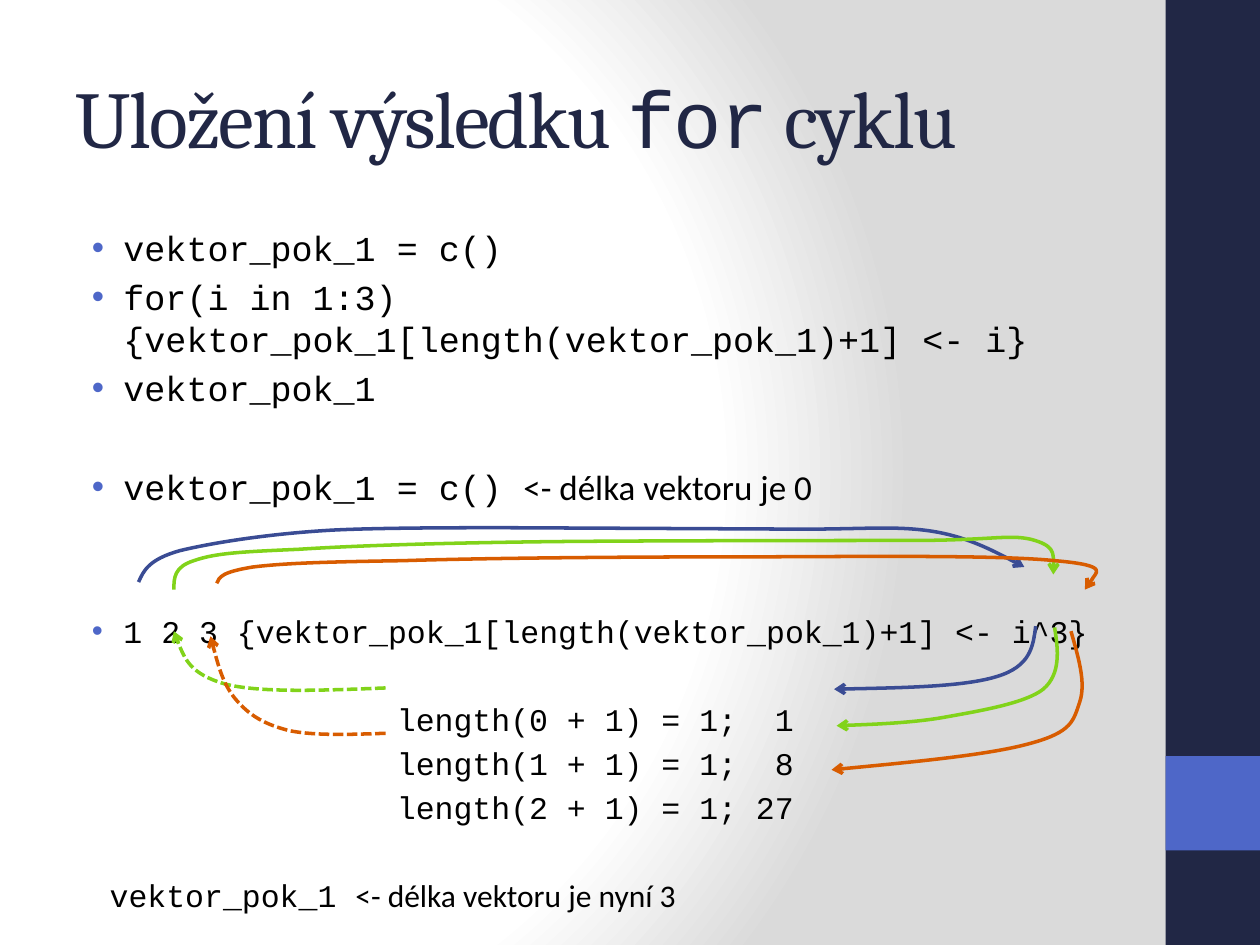
from lxml import etree
from pptx import Presentation
from pptx.dml.color import RGBColor
from pptx.enum.dml import MSO_LINE
from pptx.enum.shapes import MSO_SHAPE
from pptx.enum.text import MSO_ANCHOR, MSO_AUTO_SIZE, PP_ALIGN
from pptx.oxml import parse_xml
from pptx.oxml.ns import nsdecls, qn
from pptx.util import Inches, Pt

RECTANGLE = MSO_SHAPE.RECTANGLE
DASHED = MSO_LINE.SQUARE_DOT
MIDDLE, TOP = MSO_ANCHOR.MIDDLE, MSO_ANCHOR.TOP
LEFT, CENTER = PP_ALIGN.LEFT, PP_ALIGN.CENTER
NO_AUTOFIT = MSO_AUTO_SIZE.NONE

NAVY, BLUE, BLACK = "212745", "4E67C8", "000000"
DARK_BLUE, GREEN, ORANGE = "3A4C94", "81D31A", "D85C00"
HEADING, CODE, PLAIN = "Cambria", "Courier New", "Calibri"
STRIPE = 0.75                  # width of the right-hand stripe
MARGIN, TEXT_WIDTH = 0.5, 8.33
UNITS = 1000                   # freeform units per inch


def color(hex_text):
    return RGBColor.from_string(hex_text)


def add_run(paragraph, text, font_name, size, hex_text):
    run = paragraph.add_run()
    run.text = text
    run.font.name = font_name
    run.font.size = Pt(size)
    run.font.color.rgb = color(hex_text)
    return run


presentation = Presentation()
presentation.slide_width = Inches(10)
presentation.slide_height = Inches(7.5)
slide = presentation.slides.add_slide(presentation.slide_layouts[1])

# Background: circular gradient from white to grey
slide.background.fill.gradient()
gradient = slide.element.find(".//" + qn("a:gradFill"))
stops = "".join(
    f'<a:gs pos="{share * 1000}"><a:srgbClr val="{shade}"/></a:gs>'
    for share, shade in [(0, "FFFFFF"), (75, "FFFFFF"), (100, "DADADA")])
gradient.getparent().replace(gradient, parse_xml(
    f'<a:gradFill rotWithShape="1" {nsdecls("a")}><a:gsLst>{stops}</a:gsLst>'
    '<a:path path="circle">'
    '<a:fillToRect l="20000" t="50000" r="100000" b="50000"/>'
    '</a:path></a:gradFill>'))

# Right-hand stripe with its accent square
for top, height, fill in [(0, 7.5, NAVY), (8 * STRIPE, STRIPE, BLUE)]:
    shape = slide.shapes.add_shape(RECTANGLE, Inches(10 - STRIPE), Inches(top),
                                   Inches(STRIPE), Inches(height))
    shape.shadow.inherit = False
    shape.fill.solid()
    shape.fill.fore_color.rgb = color(fill)
    shape.line.fill.background()

# Title and body placeholders
title, body = slide.shapes.title, slide.placeholders[1]
for shape, top, height, anchor in [(title, 0.3, 1.25, MIDDLE),
                                   (body, 1.75, 5.25, TOP)]:
    shape.left, shape.top = Inches(MARGIN), Inches(top)
    shape.width, shape.height = Inches(TEXT_WIDTH), Inches(height)
    shape.text_frame.word_wrap = True
    shape.text_frame.auto_size = NO_AUTOFIT
    shape.text_frame.vertical_anchor = anchor

paragraph = title.text_frame.paragraphs[0]
paragraph.alignment = LEFT
for text, font_name in [("Uložení výsledku ", HEADING), ("for", CODE),
                        (" cyklu", HEADING)]:
    run = add_run(paragraph, text, font_name, 46, NAVY)
    run.font._element.set("spc", "-100")

# Body lines: code, comment, size, space before, left indent, bullet, alignment
lines = [
    ("vektor_pok_1 = c()", "", 20, 0, 0.38, True, LEFT),
    ("for(i in 1:3) {vektor_pok_1[length(vektor_pok_1)+1] <- i}", "",
     20, 4, 0.38, True, LEFT),
    ("vektor_pok_1", "", 20, 4, 0.38, True, LEFT),
    ("vektor_pok_1 = c() ", "<- délka vektoru je 0", 20, 32.4, 0.38, True, LEFT),
    ("1 2 3 {vektor_pok_1[length(vektor_pok_1)+1] <- i^3}", "",
     18, 59.4, 0.38, True, LEFT),
    ("length(0 + 1) = 1;  1", "", 18, 28.7, 0.12, False, CENTER),
    ("length(1 + 1) = 1;  8", "", 18, 3.7, 0.12, False, CENTER),
    ("length(2 + 1) = 1; 27", "", 18, 3.7, 0.12, False, CENTER),
    ("vektor_pok_1 ", "<- délka vektoru je nyní 3", 18, 28.7, 0.27, False, LEFT),
]
for index, (code, comment, size, before, indent, bullet, align) in enumerate(lines):
    frame = body.text_frame
    paragraph = frame.add_paragraph() if index else frame.paragraphs[0]
    paragraph.alignment = align
    paragraph.space_before = Pt(before)
    paragraph.line_spacing = Pt(1.2 * size)
    properties = paragraph._p.get_or_add_pPr()
    properties.set("marL", str(Inches(indent)))
    properties.set("indent", str(Inches(-0.25 if bullet else 0)))
    if bullet:
        bullet_color = etree.SubElement(properties, qn("a:buClr"))
        etree.SubElement(bullet_color, qn("a:srgbClr"), val=BLUE)
        etree.SubElement(properties, qn("a:buFont"), typeface="Arial")
        etree.SubElement(properties, qn("a:buChar"), char="•")
    else:
        etree.SubElement(properties, qn("a:buNone"))
    add_run(paragraph, code, CODE, size, BLACK)
    if comment:
        add_run(paragraph, comment, PLAIN, size, BLACK)

# Curved arrows: start point, then two control points and an end per Bezier piece
arrows = [
    (DARK_BLUE, False, [
        (1.1, 4.62), (1.14, 4.53), (1.18, 4.44), (1.43, 4.37),
        (1.68, 4.31), (2.11, 4.24), (2.6, 4.21),
        (3.09, 4.18), (4.35, 4.19), (4.35, 4.19),
        (4.35, 4.19), (6.37, 4.2), (6.37, 4.2),
        (6.88, 4.2), (7.12, 4.17), (7.42, 4.22),
        (7.71, 4.27), (8.13, 4.5), (8.13, 4.5)]),
    (DARK_BLUE, False, [
        (8.22, 4.97), (8.2, 5.13), (8.18, 5.29), (7.91, 5.37),
        (7.65, 5.45), (7.13, 5.46), (6.62, 5.47)]),
    (GREEN, True, [
        (3.06, 5.46), (2.56, 5.48), (2.07, 5.5), (1.79, 5.43),
        (1.51, 5.35), (1.44, 5.18), (1.38, 5.01)]),
    (GREEN, False, [
        (8.37, 4.98), (8.4, 5.16), (8.42, 5.35), (8.28, 5.47),
        (8.14, 5.58), (7.79, 5.64), (7.51, 5.69),
        (7.24, 5.74), (6.64, 5.76), (6.64, 5.76)]),
    (ORANGE, True, [
        (3.06, 5.82), (2.78, 5.83), (2.5, 5.84), (2.3, 5.8),
        (2.1, 5.75), (1.98, 5.68), (1.87, 5.55),
        (1.77, 5.43), (1.72, 5.24), (1.67, 5.05)]),
    (ORANGE, False, [
        (8.5, 5.01), (8.56, 5.22), (8.62, 5.42), (8.57, 5.57),
        (8.52, 5.72), (8.51, 5.81), (8.18, 5.9),
        (7.86, 5.99), (7.23, 6.05), (6.6, 6.11)]),
    (GREEN, False, [
        (1.38, 4.68), (1.38, 4.59), (1.38, 4.5), (1.54, 4.45),
        (1.71, 4.39), (1.91, 4.38), (2.37, 4.36),
        (2.83, 4.33), (3.51, 4.31), (4.32, 4.3),
        (5.13, 4.29), (7.22, 4.29), (7.22, 4.29),
        (7.87, 4.29), (8, 4.24), (8.18, 4.28),
        (8.37, 4.33), (8.37, 4.44), (8.36, 4.56)]),
    (ORANGE, False, [
        (1.72, 4.63), (1.74, 4.58), (1.76, 4.54), (2.01, 4.5),
        (2.26, 4.47), (2.58, 4.46), (3.2, 4.45),
        (3.83, 4.43), (4.91, 4.42), (5.77, 4.42),
        (6.63, 4.42), (7.89, 4.4), (8.37, 4.45),
        (8.84, 4.49), (8.61, 4.68), (8.61, 4.68)]),
]
for line_color, dashed, points in arrows:
    points = [(round(x * UNITS), round(y * UNITS)) for x, y in points]
    anchors = points[::3]
    builder = slide.shapes.build_freeform(*anchors[0], scale=Inches(1) / UNITS)
    builder.add_line_segments(anchors[1:], close=False)
    shape = builder.convert_to_shape()

    # Bend each straight segment into its Bezier piece
    left, top = (min(values) for values in zip(*anchors))
    segments = shape._element.findall(".//" + qn("a:lnTo"))
    for index, segment in enumerate(segments):
        curve = etree.Element(qn("a:cubicBezTo"))
        for x, y in points[3 * index + 1:3 * index + 4]:
            etree.SubElement(curve, qn("a:pt"), x=str(x - left), y=str(y - top))
        segment.getparent().replace(segment, curve)

    shape.shadow.inherit = False
    shape.fill.background()
    shape.line.color.rgb = color(line_color)
    shape.line.width = Pt(2)
    if dashed:
        shape.line.dash_style = DASHED
    etree.SubElement(shape.line._get_or_add_ln(), qn("a:tailEnd"), type="arrow")

presentation.save("out.pptx")
